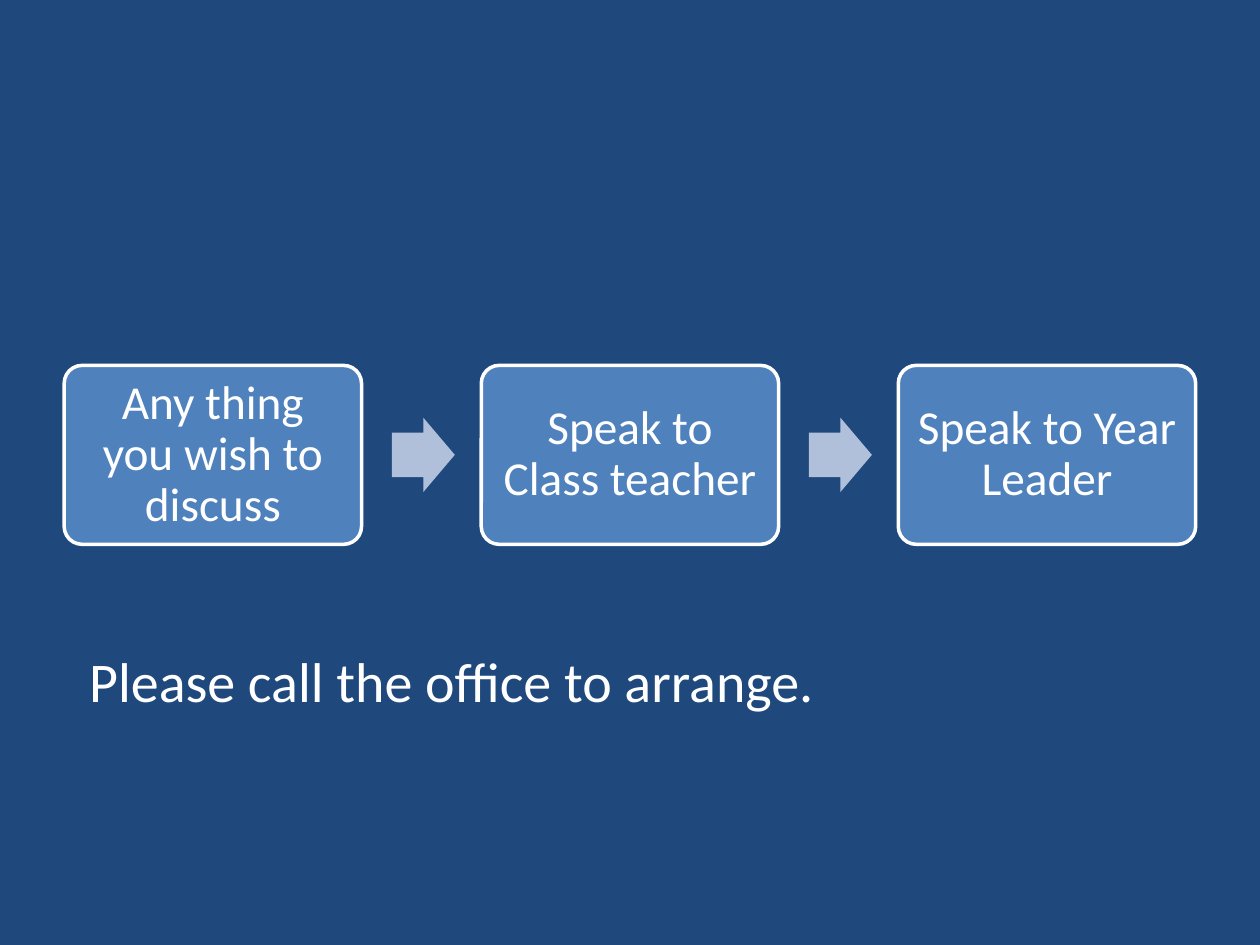
from pptx import Presentation
from pptx.dml.color import RGBColor
from pptx.enum.shapes import MSO_SHAPE
from pptx.enum.text import MSO_ANCHOR, PP_ALIGN
from pptx.util import Inches, Pt

NAVY = RGBColor(0x1F, 0x49, 0x7D)
BLUE = RGBColor(0x4F, 0x81, 0xBD)
PALE = RGBColor(0xB1, 0xC0, 0xDA)
WHITE = RGBColor(0xFF, 0xFF, 0xFF)

STEPS = ["Any thing you wish to discuss", "Speak to Class teacher", "Speak to Year Leader"]
LEFT, PITCH, MIDDLE = 0.51, 3.31, 3.61
BOX_W, BOX_H = 2.36, 1.42
ARROW_OFFSET, ARROW_W, ARROW_H = 2.6, 0.5, 0.59


class FlowSlide:
    """Style and current slide; columns are PITCH wide and centred on MIDDLE."""

    font = "Calibri"

    def __init__(self, prs):
        self.s = prs.slides.add_slide(prs.slide_layouts[6])
        fill = self.s.background.fill
        fill.solid()
        fill.fore_color.rgb = NAVY

    def shape(self, kind, col, offset, w, h, color, adjustments):
        x = LEFT + col * PITCH + offset
        sp = self.s.shapes.add_shape(
            kind, Inches(x), Inches(MIDDLE - h / 2), Inches(w), Inches(h))
        for i, value in enumerate(adjustments):
            sp.adjustments[i] = value
        sp.shadow.inherit = False
        sp.fill.solid()
        sp.fill.fore_color.rgb = color
        sp.line.fill.background()
        return sp

    def set_text(self, tf, text, size):
        p = tf.paragraphs[0]
        p.text = text
        font = p.runs[0].font
        font.name, font.size, font.color.rgb = self.font, Pt(size), WHITE
        return p

    def step(self, col, text):
        sp = self.shape(MSO_SHAPE.ROUNDED_RECTANGLE, col, 0, BOX_W, BOX_H, BLUE, [0.1])
        sp.line.color.rgb = WHITE
        sp.line.width = Pt(2)
        tf = sp.text_frame
        tf.word_wrap = True
        tf.vertical_anchor = MSO_ANCHOR.MIDDLE
        tf.margin_left = tf.margin_right = tf.margin_top = tf.margin_bottom = Inches(0.11)
        p = self.set_text(tf, text, 27)
        p.alignment = PP_ALIGN.CENTER
        p.line_spacing = 0.9

    def arrow(self, col):
        self.shape(MSO_SHAPE.RIGHT_ARROW, col, ARROW_OFFSET, ARROW_W, ARROW_H, PALE, [0.6, 0.5])

    def caption(self, text, x, y, w, h):
        tb = self.s.shapes.add_textbox(Inches(x), Inches(y), Inches(w), Inches(h))
        tb.text_frame.word_wrap = False
        self.set_text(tb.text_frame, text, 32)


def main():
    prs = Presentation()
    prs.slide_width, prs.slide_height = Inches(10), Inches(7.5)
    flow = FlowSlide(prs)
    for col, text in enumerate(STEPS):
        if col:
            flow.arrow(col - 1)
        flow.step(col, text)
    flow.caption("Please call the office to arrange.", 0.61, 5.08, 6.04, 0.64)
    prs.save("out.pptx")


if __name__ == "__main__":
    main()
